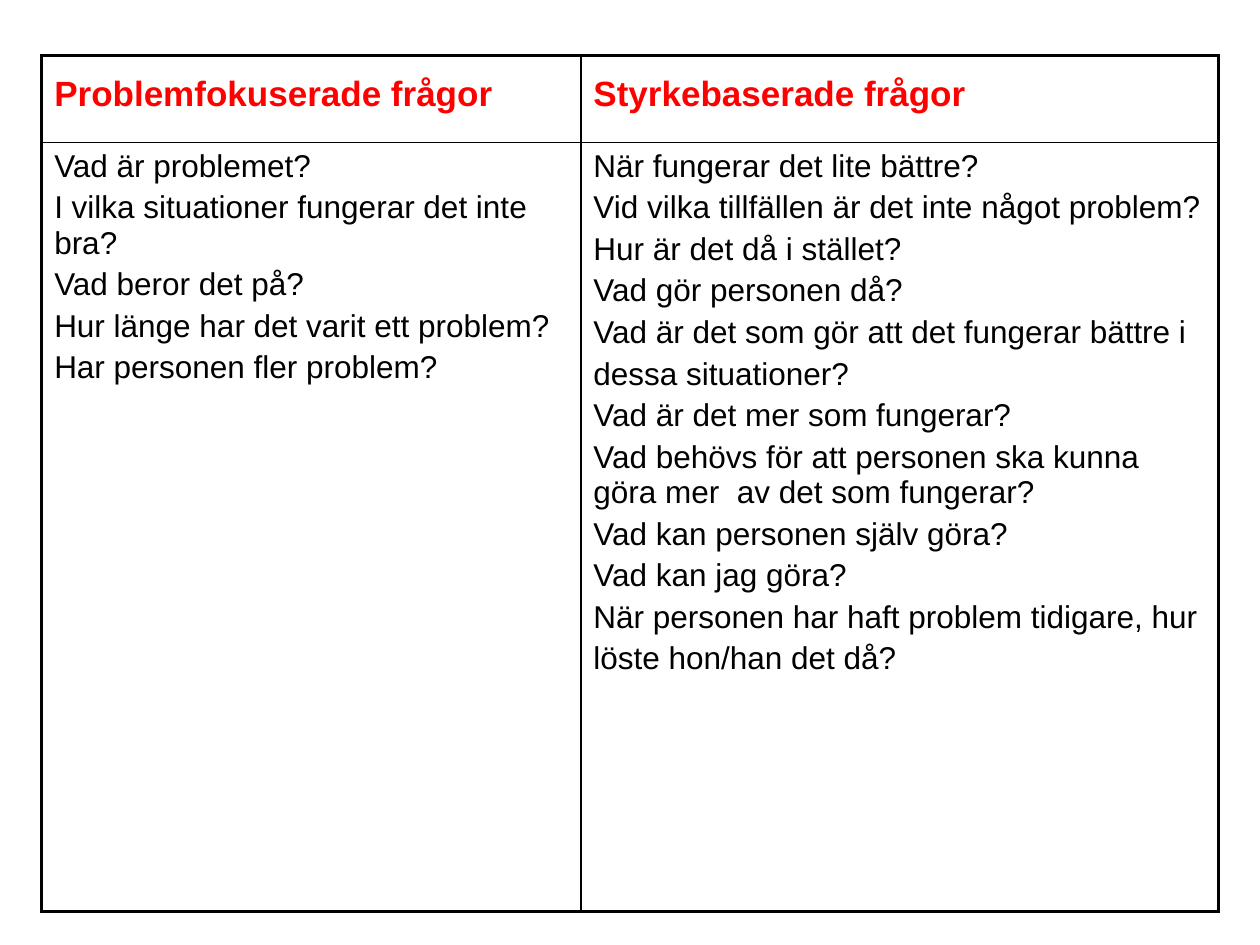
from dataclasses import dataclass

from lxml import etree
from pptx import Presentation
from pptx.dml.color import RGBColor
from pptx.oxml.ns import qn
from pptx.table import Table, _Cell
from pptx.text.text import _Paragraph
from pptx.util import Cm, Pt

BLANK_LAYOUT = 6


@dataclass(frozen=True)
class Theme:
    font: str = "Arial"
    heading_color: str = "FF0000"
    text_color: str = "000000"
    border_color: str = "000000"
    heading_size: float = 20
    heading_end_size: float = 28
    text_size: float = 18
    space_before: float = 3.6
    outer_border: float = 2.25
    inner_border: float = 1


@dataclass(frozen=True)
class QuestionColumn:
    heading: str
    width: float
    questions: tuple[str, ...]


THEME = Theme()
ROW_HEIGHTS = (1.75, 15.5)
COLUMNS = (
    QuestionColumn("Problemfokuserade frågor", 10.87, (
        "Vad är problemet?",
        "I vilka situationer fungerar det inte bra?",
        "Vad beror det på?",
        "Hur länge har det varit ett problem?",
        "Har personen fler problem?",
    )),
    QuestionColumn("Styrkebaserade frågor", 12.85, (
        "När fungerar det lite bättre?",
        "Vid vilka tillfällen är det inte något problem?",
        "Hur är det då i stället?",
        "Vad gör personen då?",
        "Vad är det som gör att det fungerar bättre i",
        "dessa situationer?",
        "Vad är det mer som fungerar?",
        "Vad behövs för att personen ska kunna göra mer  av det som fungerar?",
        "Vad kan personen själv göra?",
        "Vad kan jag göra?",
        "När personen har haft problem tidigare, hur",
        "löste hon/han det då?",
    )),
)


def add_span(para: _Paragraph, text: str, color: str, size: float, bold: bool = False) -> None:
    span = para.add_run()
    span.text = text
    formats = {"name": THEME.font, "size": Pt(size), "bold": bold}
    for name, value in formats.items():
        setattr(span.font, name, value)
    span.font.color.rgb = RGBColor.from_string(color)


def write_heading(cell: _Cell, heading: str) -> None:
    """Write a bold heading whose larger closing space sets the line height."""
    para = cell.text_frame.paragraphs[0]
    para.space_before = Pt(THEME.space_before)
    add_span(para, heading, THEME.heading_color, THEME.heading_size, bold=True)
    add_span(para, " ", THEME.heading_color, THEME.heading_end_size)


def write_questions(cell: _Cell, questions: tuple[str, ...]) -> None:
    frame = cell.text_frame
    for index, question in enumerate(questions):
        para = frame.add_paragraph() if index else frame.paragraphs[0]
        para.space_before = Pt(THEME.space_before)
        add_span(para, question, THEME.text_color, THEME.text_size)


def set_borders(cell: _Cell, outer_sides: dict[str, bool]) -> None:
    properties = cell._tc.get_or_add_tcPr()
    for side, is_outer in outer_sides.items():
        width = THEME.outer_border if is_outer else THEME.inner_border
        line = etree.SubElement(properties, qn(f"a:ln{side}"), w=str(Pt(width)))
        fill = etree.SubElement(line, qn("a:solidFill"))
        etree.SubElement(fill, qn("a:srgbClr"), val=THEME.border_color)


def format_cells(table: Table) -> None:
    last_row, last_column = len(table.rows) - 1, len(table.columns) - 1
    for row in range(last_row + 1):
        for column in range(last_column + 1):
            cell = table.cell(row, column)
            set_borders(cell, {
                "L": column == 0,
                "R": column == last_column,
                "T": row == 0,
                "B": row == last_row,
            })
            cell.fill.background()


def main() -> None:
    deck = Presentation()
    deck.slide_width, deck.slide_height = Cm(25.4), Cm(19.05)
    page = deck.slides.add_slide(deck.slide_layouts[BLANK_LAYOUT])
    table = page.shapes.add_table(
        len(ROW_HEIGHTS), len(COLUMNS), Cm(0.84), Cm(1.12),
        Cm(sum(column.width for column in COLUMNS)), Cm(sum(ROW_HEIGHTS)),
    ).table
    table.first_row = table.horz_banding = False
    for row, height in zip(table.rows, ROW_HEIGHTS):
        row.height = Cm(height)
    for index, column in enumerate(COLUMNS):
        table.columns[index].width = Cm(column.width)
        write_heading(table.cell(0, index), column.heading)
        write_questions(table.cell(1, index), column.questions)
    format_cells(table)
    deck.save("out.pptx")


if __name__ == "__main__":
    main()
